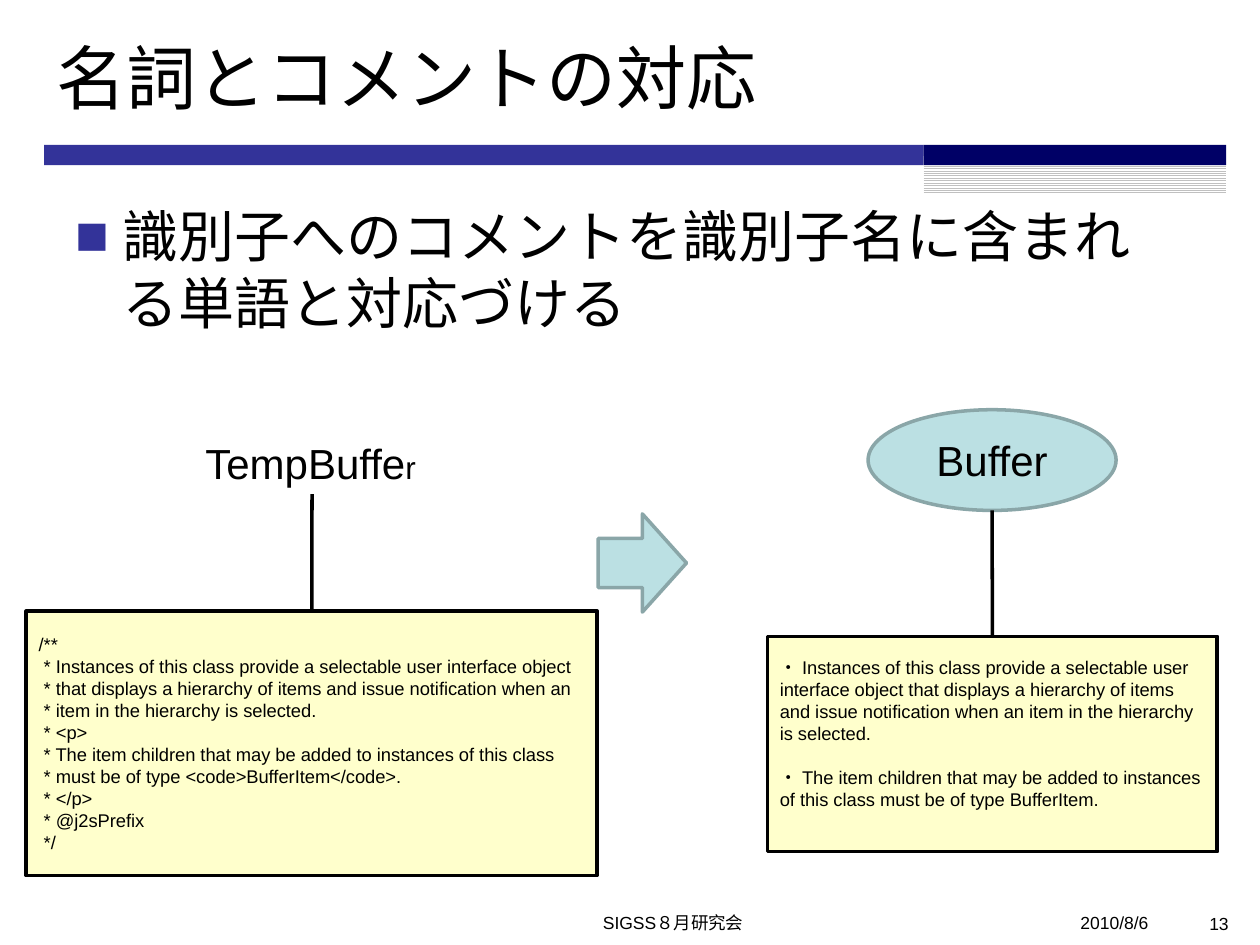
from pptx import Presentation
from pptx import util as u
from pptx.dml.color import RGBColor
from pptx.enum import dml, shapes, text
from pptx.oxml.ns import qn
from lxml import etree

FONT = "Arial"
HUES = {
    "ink": "000000", "white": "FFFFFF", "bar": "333399", "navy": "000066",
    "grey": "C0C0C0", "note": "FFFFCC", "aqua": "BBE0E3", "rim": "8AA6A8",
}
KIND = shapes.MSO_SHAPE
SIDE = text.PP_ALIGN
SPOT = text.MSO_ANCHOR

CODE = [
    "/**",
    " * Instances of this class provide a selectable user interface object",
    " * that displays a hierarchy of items and issue notification when an",
    " * item in the hierarchy is selected.",
    " * <p>",
    " * The item children that may be added to instances of this class",
    " * must be of type <code>BufferItem</code>.",
    " * </p>",
    " * @j2sPrefix",
    " */",
]
NOTES = [
    "・ Instances of this class provide a selectable user interface object that "
    "displays a hierarchy of items and issue notification when an item in the "
    "hierarchy is selected.",
    "・ The item children that may be added to instances of this class must be "
    "of type BufferItem.",
]


def hue(name):
    return RGBColor.from_string(HUES[name])


def place(box):
    return [u.Cm(n) for n in box]


def add_run(para, words, size):
    run = para.add_run()
    run.text = words
    run.font.size = u.Pt(size)
    run.font.name = FONT
    run.font.color.rgb = hue("ink")


def write(shape, lines, size, align=SIDE.LEFT, anchor=SPOT.TOP, gap=0):
    """Put one paragraph per line in the shape, with a gap in points between."""
    frame = shape.text_frame
    frame.auto_size = text.MSO_AUTO_SIZE.NONE
    frame.word_wrap = True
    frame.vertical_anchor = anchor
    for i, line in enumerate(lines):
        para = frame.add_paragraph() if i else frame.paragraphs[0]
        para.alignment = align
        if i and gap:
            para.space_before = u.Pt(gap)
        add_run(para, line, size)
    return frame


def add_text(slide, box, line, size, align=SIDE.LEFT):
    shape = slide.shapes.add_textbox(*place(box))
    write(shape, [line], size, align)
    return shape


def add_form(slide, kind, box, fill, rim=None):
    shape = slide.shapes.add_shape(kind, *place(box))
    shape.shadow.inherit = False
    shape.fill.solid()
    shape.fill.fore_color.rgb = hue(fill)
    if rim:
        shape.line.color.rgb = hue(rim)
        shape.line.width = u.Pt(2)
    else:
        shape.line.fill.background()
    return shape


def add_link(slide, x, top, end):
    """Draw a line down from a point to the top side of a box."""
    link = slide.shapes.add_connector(
        shapes.MSO_CONNECTOR.STRAIGHT, *place((x, top)), u.Cm(x), end.top)
    link.end_connect(end, 0)
    link.line.color.rgb = hue("ink")
    link.line.width = u.Pt(2)
    etree.SubElement(link._element.spPr, qn("a:effectLst"))
    return link


def add_bullet(para, mark, name):
    props = para._p.get_or_add_pPr()
    props.set("marL", str(u.Cm(0.95)))
    props.set("indent", str(u.Cm(-0.95)))
    tint = etree.SubElement(props, qn("a:buClr"))
    etree.SubElement(tint, qn("a:srgbClr"), val=HUES[name])
    etree.SubElement(props, qn("a:buFont"), typeface=FONT)
    etree.SubElement(props, qn("a:buChar"), char=mark)


def add_bars(slide):
    add_form(slide, KIND.RECTANGLE, (0.89, 2.92, 17.73, 0.41), "bar")
    lines = add_form(slide, KIND.RECTANGLE, (18.62, 3.15, 6.1, 0.76), "white")
    lines.fill.patterned()
    lines.fill.pattern = dml.MSO_PATTERN.LIGHT_HORIZONTAL
    lines.fill.fore_color.rgb = hue("grey")
    lines.fill.back_color.rgb = hue("white")
    add_form(slide, KIND.RECTANGLE, (18.62, 2.92, 6.1, 0.41), "navy")


def add_title(slide, line):
    title = slide.shapes.title
    title.left, title.top, title.width, title.height = place(
        (0.89, 0.33, 23.83, 2.41))
    write(title, [line], 40, anchor=SPOT.MIDDLE)


def add_foot(slide):
    add_text(slide, (5.77, 18.26, 15.6, 0.79), "SIGSS８月研究会", 10, SIDE.CENTER)
    add_text(slide, (19.46, 18.26, 3.94, 0.79), "2010/8/6", 10, SIDE.RIGHT)
    add_text(slide, (23.5, 18.29, 1.52, 0.76), "13", 10, SIDE.RIGHT)


def add_source(slide):
    """Identifier on the left with its full comment."""
    label = add_text(slide, (3.89, 8.69, 4.8, 1.27), "TempBuffe", 24)
    label.text_frame.word_wrap = False
    add_run(label.text_frame.paragraphs[0], "r", 18)
    code = add_form(slide, KIND.RECTANGLE, (0.53, 12.32, 11.51, 5.33),
                    "note", "ink")
    write(code, CODE, 10.5, anchor=SPOT.MIDDLE)
    add_link(slide, 6.29, 9.96, code).begin_connect(label, 2)


def add_result(slide):
    """Noun on the right with the sentences tied to it."""
    noun = add_form(slide, KIND.OVAL, (17.5, 8.26, 5, 2.03), "aqua", "rim")
    write(noun, ["Buffer"], 24, SIDE.CENTER, SPOT.MIDDLE)
    notes = add_form(slide, KIND.RECTANGLE, (15.47, 12.83, 9.07, 4.34),
                     "note", "ink")
    frame = write(notes, NOTES, 10.5, gap=12.6)
    frame.margin_top = u.Cm(0.4)
    add_link(slide, 20, 10.29, notes)


def main():
    deck = Presentation()
    deck.slide_width, deck.slide_height = place((25.4, 19.05))
    slide = deck.slides.add_slide(deck.slide_layouts[5])
    add_bars(slide)
    add_title(slide, "名詞とコメントの対応")
    body = add_text(slide, (1.27, 3.94, 22.86, 3.2),
                    "識別子へのコメントを識別子名に含まれる単語と対応づける", 32)
    add_bullet(body.text_frame.paragraphs[0], "■", "bar")
    add_foot(slide)
    add_source(slide)
    add_form(slide, KIND.RIGHT_ARROW, (12.06, 10.36, 1.78, 1.98), "aqua", "rim")
    add_result(slide)
    deck.save("out.pptx")


if __name__ == "__main__":
    main()
